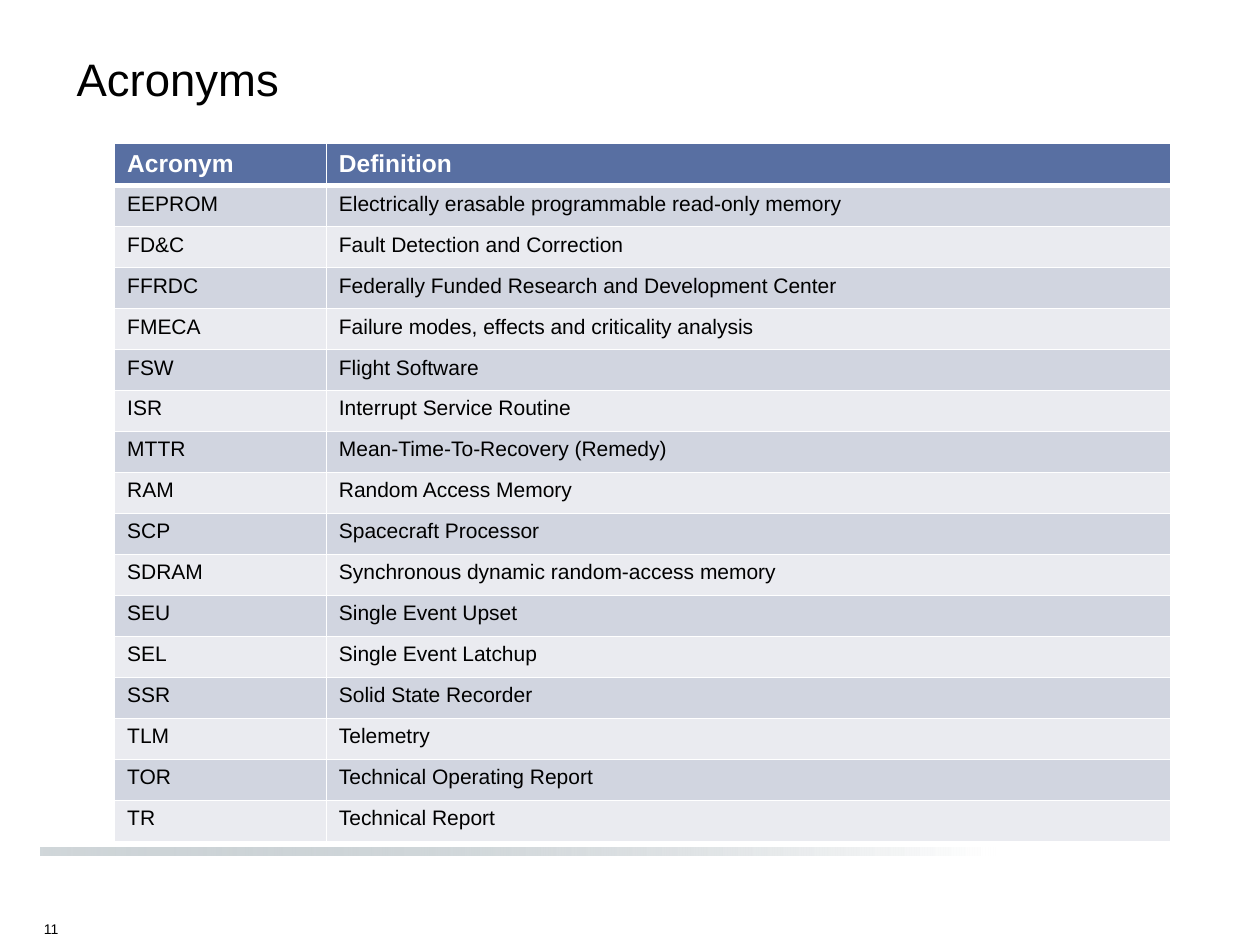
from pptx import Presentation
from pptx import util as u
from pptx.dml.color import RGBColor
from pptx.enum import shapes, text
from pptx.oxml import ns, parse_xml

BLACK = RGBColor(0x00, 0x00, 0x00)
WHITE = RGBColor(0xFF, 0xFF, 0xFF)
HEADER = RGBColor(0x58, 0x6F, 0xA2)
BANDS = (RGBColor(0xD1, 0xD5, 0xE0), RGBColor(0xEA, 0xEB, 0xF0))
RULE = RGBColor(0x82, 0x93, 0x9B)

ROWS = [
    ("Acronym", "Definition"),
    ("EEPROM", "Electrically erasable programmable read-only memory"),
    ("FD&C", "Fault Detection and Correction"),
    ("FFRDC", "Federally Funded Research and Development Center"),
    ("FMECA", "Failure modes, effects and criticality analysis"),
    ("FSW", "Flight Software"),
    ("ISR", "Interrupt Service Routine"),
    ("MTTR", "Mean-Time-To-Recovery (Remedy)"),
    ("RAM", "Random Access Memory"),
    ("SCP", "Spacecraft Processor"),
    ("SDRAM", "Synchronous dynamic random-access memory"),
    ("SEU", "Single Event Upset"),
    ("SEL", "Single Event Latchup"),
    ("SSR", "Solid State Recorder"),
    ("TLM", "Telemetry"),
    ("TOR", "Technical Operating Report"),
    ("TR", "Technical Report"),
]


class SlideBuilder:
    def __init__(self, s, font="Arial"):
        self.s = s
        self.font = font

    def format_text(self, tf, size, color=BLACK, bold=False):
        for p in tf.paragraphs:
            for r in p.runs:
                r.font.name = self.font
                r.font.size = u.Pt(size)
                r.font.bold = bold
                r.font.color.rgb = color

    def text(self, box, words, size, anchor=text.MSO_ANCHOR.TOP, spacing=1.0):
        tf = self.s.shapes.add_textbox(*map(u.Inches, box)).text_frame
        tf.word_wrap = True
        tf.vertical_anchor = anchor
        tf.text = words
        tf.paragraphs[0].line_spacing = spacing
        self.format_text(tf, size)

    def fading_rule(self, box, color, opacity):
        """Draw a bar that fades from a translucent colour to white."""
        sp = self.s.shapes.add_shape(shapes.MSO_SHAPE.RECTANGLE, *map(u.Inches, box))
        sp.shadow.inherit = False
        sp.line.fill.background()
        sp.fill.gradient()
        sp.fill.gradient_angle = 0
        for stop, rgb in zip(sp.fill.gradient_stops, (color, WHITE)):
            stop.color.rgb = rgb
        start = sp.element.spPr.find(".//" + ns.qn("a:srgbClr"))
        start.append(parse_xml(
            f'<a:alpha {ns.nsdecls("a")} val="{opacity * 1000}"/>'))

    def borders(self, cell, top, bottom):
        tc_pr = cell._tc.get_or_add_tcPr()
        widths = {"L": 1, "R": 1, "T": top, "B": bottom}
        for i, (side, width) in enumerate(widths.items()):
            tc_pr.insert(i, parse_xml(
                f'<a:ln{side} {ns.nsdecls("a")} w="{u.Pt(width)}"><a:solidFill>'
                f'<a:srgbClr val="{WHITE}"/></a:solidFill></a:ln{side}>'))

    def table(self, box, rows, col_widths):
        frame = self.s.shapes.add_table(
            len(rows), len(col_widths), *map(u.Inches, box))
        table = frame.table
        for col, width in zip(table.columns, col_widths):
            col.width = u.Inches(width)
        for i, row in enumerate(rows):
            table.rows[i].height = u.Inches(box[3] / len(rows))
            header = i == 0
            for j, words in enumerate(row):
                cell = table.cell(i, j)
                cell.text = words
                cell.fill.solid()
                cell.fill.fore_color.rgb = HEADER if header else BANDS[(i - 1) % 2]
                self.borders(cell, top=3 if i == 1 else 1, bottom=3 if header else 1)
                self.format_text(cell.text_frame, 14 if header else 12,
                                 WHITE if header else BLACK, header)


def main():
    prs = Presentation()
    prs.slide_width, prs.slide_height = u.Inches(10), u.Inches(7.5)
    slide = SlideBuilder(prs.slides.add_slide(prs.slide_layouts[6]))
    slide.text((0.25, 7.26, 0.83, 0.24), "11", 8)
    slide.fading_rule((0.32, 6.73, 7.58, 0.06), RULE, opacity=37)
    slide.text((0.51, 0.33, 9, 0.64), "Acronyms", 26, text.MSO_ANCHOR.MIDDLE, 0.9)
    slide.table((0.91, 1.14, 8.38, 5.53), ROWS, (1.68, 6.7))
    prs.save("out.pptx")


if __name__ == "__main__":
    main()
